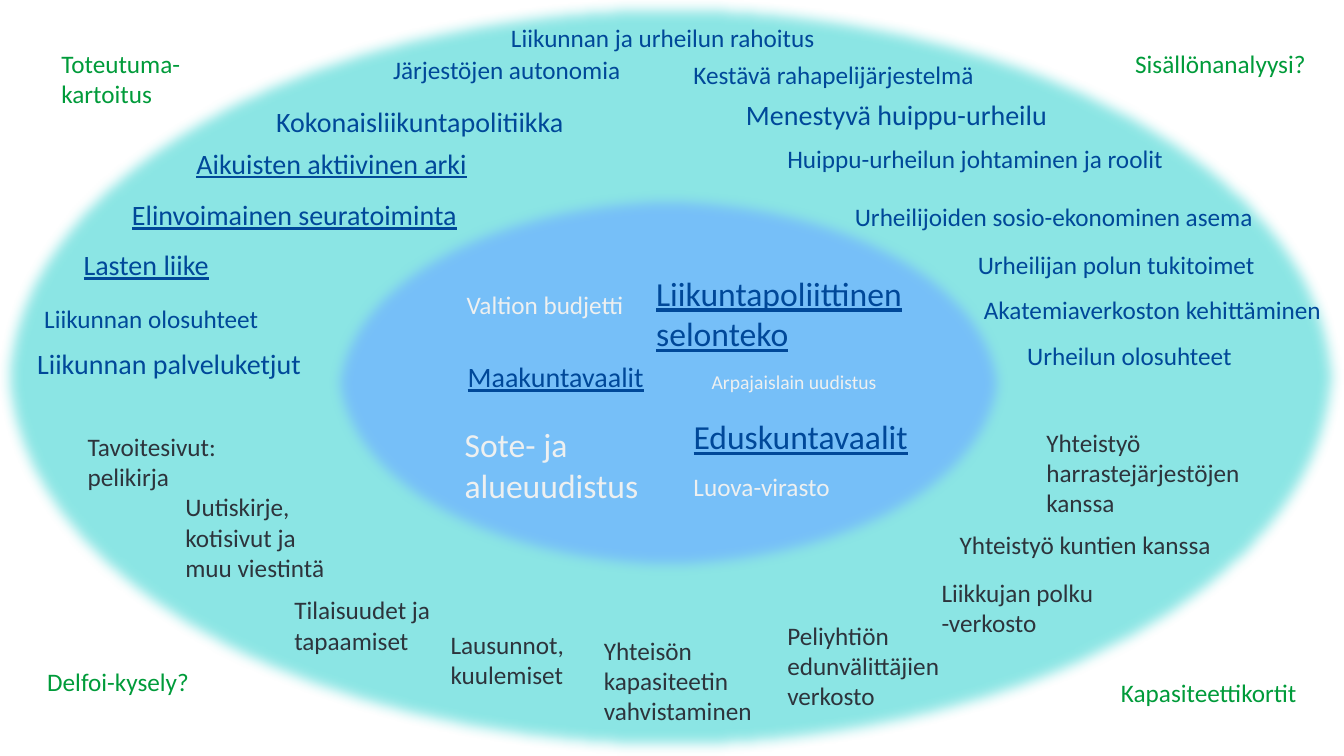
import pptx
import pptx.util
import pptx.dml.color
import pptx.enum.shapes
import pptx.enum.text
import pptx.oxml.ns
import lxml.etree

Inches = pptx.util.Inches

COLORS = {
    "outer": "5BDCD9",
    "inner": "70B3FF",
    "blue": "004899",
    "light": "EEF0F0",
    "dark": "2D343C",
    "green": "009B3A",
}

deck = pptx.Presentation()
deck.slide_width = Inches(13.33)
deck.slide_height = Inches(7.5)
page = deck.slides.add_slide(deck.slide_layouts[6])


def add_label(text, left, top, width, lines=1, size=18, color="blue",
              underline=False, wrap=True):
    height = 0.1 + lines * size / 60
    box = page.shapes.add_textbox(Inches(left), Inches(top), Inches(width), Inches(height))
    frame = box.text_frame
    frame.word_wrap = wrap
    frame.auto_size = pptx.enum.text.MSO_AUTO_SIZE.SHAPE_TO_FIT_TEXT
    span = frame.paragraphs[0].add_run()
    span.text = text
    span.font.name = "Calibri"
    span.font.size = pptx.util.Pt(size)
    span.font.color.rgb = pptx.dml.color.RGBColor.from_string(COLORS[color])
    if underline:
        span.font.underline = True


# Two translucent ellipses with soft edges
for name, left, top, width, height, opacity in [
    ("outer", 0, 0, 13.33, 7.5, 70),
    ("inner", 3.26, 1.89, 6.75, 3.82, 75),
]:
    ellipse = page.shapes.add_shape(
        pptx.enum.shapes.MSO_SHAPE.OVAL,
        Inches(left), Inches(top), Inches(width), Inches(height))
    ellipse.shadow.inherit = False
    ellipse.line.fill.background()
    ellipse.fill.solid()
    ellipse.fill.fore_color.rgb = pptx.dml.color.RGBColor.from_string(COLORS[name])
    qn = pptx.oxml.ns.qn
    properties = ellipse.element.spPr
    color_node = properties.find(qn("a:solidFill")).find(qn("a:srgbClr"))
    lxml.etree.SubElement(color_node, qn("a:alpha"), val=str(opacity * 1000))
    effects = properties.find(qn("a:effectLst"))
    lxml.etree.SubElement(effects, qn("a:softEdge"), rad="112500")

# Inner ellipse: national decisions
add_label("Sote- ja alueuudistus", 4.51, 4.16, 2.16, lines=2, size=24, color="light")
add_label("Maakuntavaalit", 4.54, 3.52, 1.97, size=20, underline=True, wrap=False)
add_label("Arpajaislain uudistus", 6.96, 3.62, 1.86, size=14, color="light", wrap=False)
add_label("Eduskuntavaalit", 6.78, 4.08, 2.35, size=24, underline=True, wrap=False)
add_label("Luova-virasto", 6.78, 4.63, 1.57, color="light", wrap=False)
add_label("Liikuntapoliittinen selonteko", 6.41, 2.66, 2.77, lines=2, size=24, underline=True)
add_label("Valtion budjetti", 4.53, 2.82, 2.14, color="light")

# Outer ellipse, larger themes
for text, left, top, width, underline in [
    ("Liikunnan palveluketjut", 0.27, 3.39, 3.16, False),
    ("Lasten liike", 0.73, 2.41, 1.79, True),
    ("Elinvoimainen seuratoiminta", 1.21, 1.91, 3.69, True),
    ("Aikuisten aktiivinen arki", 1.85, 1.4, 3.43, True),
    ("Kokonaisliikuntapolitiikka", 2.64, 0.99, 3.25, False),
    ("Menestyvä huippu-urheilu", 7.3, 0.92, 3.53, False),
]:
    add_label(text, left, top, width, size=20, underline=underline)

# Outer ellipse, other themes
for text, left, top, width in [
    ("Liikunnan olosuhteet", 0.34, 2.96, 2.49),
    ("Järjestöjen autonomia", 3.8, 0.49, 2.54),
    ("Liikunnan ja urheilun rahoitus", 4.97, 0.17, 3.4),
    ("Kestävä rahapelijärjestelmä", 6.78, 0.54, 3.53),
    ("Huippu-urheilun johtaminen ja roolit", 7.71, 1.37, 3.98),
    ("Urheilijoiden sosio-ekonominen asema", 8.38, 1.95, 4.41),
    ("Urheilijan polun tukitoimet", 9.6, 2.42, 3.53),
    ("Akatemiaverkoston kehittäminen", 9.66, 2.87, 3.81),
    ("Urheilun olosuhteet", 10.09, 3.33, 2.5),
]:
    add_label(text, left, top, width)

# Outer ellipse, ways of working
for text, left, top, width, lines in [
    ("Tavoitesivut: pelikirja", 0.77, 4.23, 1.59, 2),
    ("Uutiskirje, kotisivut ja muu viestintä", 1.74, 4.83, 1.78, 3),
    ("Tilaisuudet ja tapaamiset", 2.82, 5.85, 1.78, 2),
    ("Lausunnot, kuulemiset", 4.37, 6.19, 1.42, 2),
    ("Yhteisön kapasiteetin vahvistaminen", 5.89, 6.25, 1.78, 3),
    ("Peliyhtiön edunvälittäjien verkosto", 7.71, 6.1, 1.79, 3),
    ("Liikkujan polku -verkosto", 9.24, 5.68, 2.34, 2),
    ("Yhteistyö kuntien kanssa", 9.42, 5.2, 2.81, 1),
    ("Yhteistyö harrastejärjestöjen kanssa", 10.28, 4.19, 2.17, 3),
]:
    add_label(text, left, top, width, lines=lines, color="dark")

# Corners: methods
add_label("Toteutuma-kartoitus", 0.51, 0.43, 1.78, lines=2, color="green")
add_label("Sisällönanalyysi?", 11.16, 0.43, 1.99, color="green")
add_label("Delfoi-kysely?", 0.37, 6.56, 1.78, color="green")
add_label("Kapasiteettikortit", 11.02, 6.67, 2.14, color="green")

deck.save("out.pptx")
